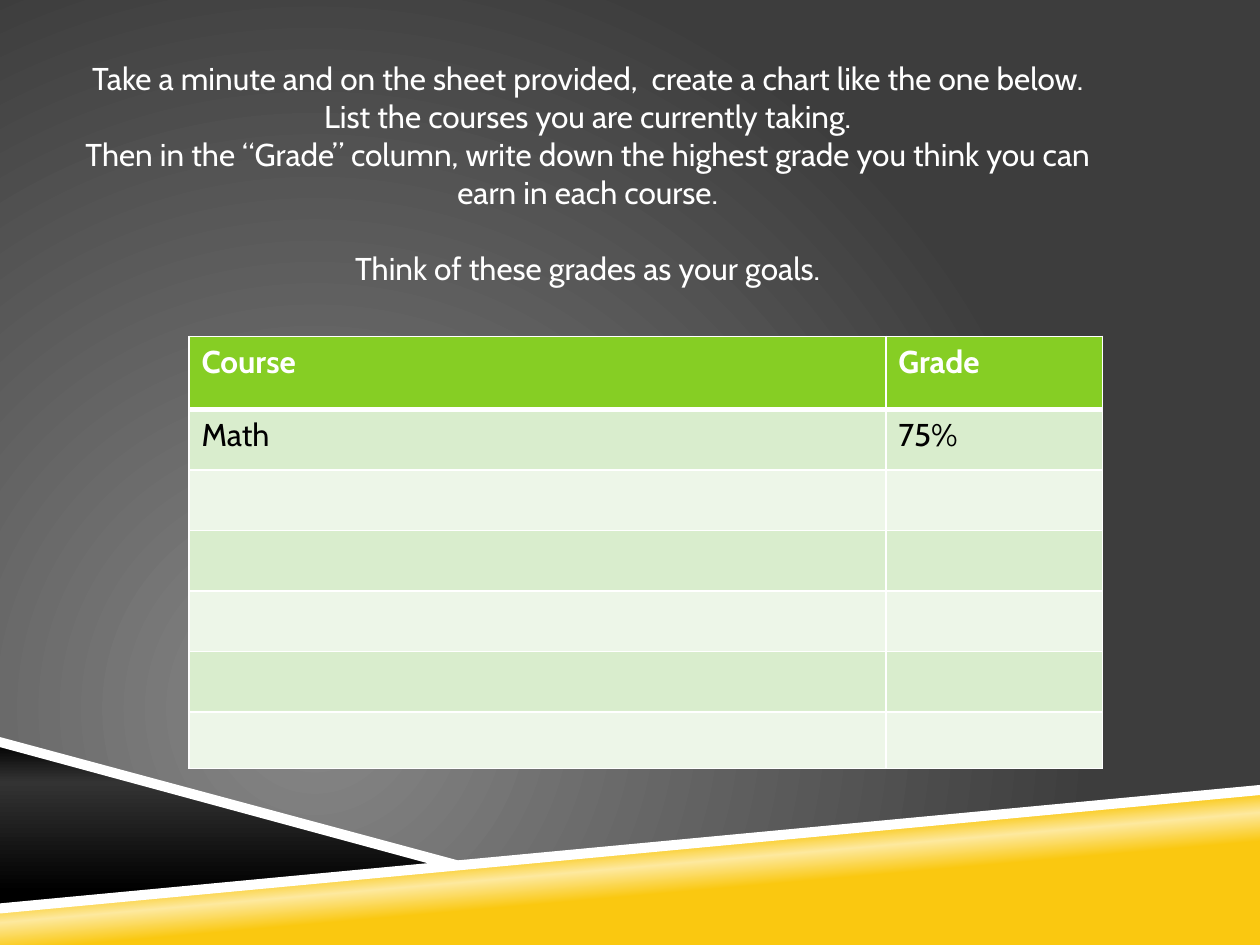
"""Build the course and grade goals slide."""
from dataclasses import dataclass
from typing import Any, NamedTuple

from lxml.etree import SubElement
from pptx import Presentation
from pptx.dml.color import RGBColor
from pptx.enum.text import MSO_AUTO_SIZE, PP_ALIGN
from pptx.oxml.ns import qn
from pptx.util import Inches, Pt

COLS, ROWS = 100, 75
CELL = Inches(10) / COLS


@dataclass(frozen=True)
class Theme:
    font: str = "Cabin"
    size: int = 18
    gap: int = 22
    thin: float = 1
    thick: float = 3
    white: str = "FFFFFF"
    black: str = "000000"
    head: str = "86CE24"
    bands: tuple = ("D9EDCD", "EDF6E8")
    back: tuple = ((0, "878787"), (100, "3D3D3D"))
    gold: tuple = ((39, "FAC810"), (50, "FDE99F"), (58, "FAC810"))
    dark: tuple = ((0, "000000"), (24, "333333"), (90, "000000"))


class Band(NamedTuple):
    points: tuple
    stops: tuple = ()
    angle: int = 0


class Para(NamedTuple):
    text: str
    gap: int = 0


THEME = Theme()
BANDS = (
    Band(((0, 72.1), (100, 62.7), (100, 75), (0, 75)), THEME.gold, 265),
    Band(((0, 58.9), (35.9, 68.5), (0, 72.1)), THEME.dark, 90),
    Band(((100, 62.3), (0, 71.7), (0, 72.5), (100, 63.1))),
    Band(((0, 58.5), (0, 59.3), (35, 68.8), (37.5, 68.6))),
)
PARAS = (
    Para("Take a minute and on the sheet provided,  create a chart like "
         "the one below. List the courses you are currently taking."),
    Para("Then in the “Grade” column, write down the highest grade you "
         "think you can earn in each course."),
    Para("Think of these grades as your goals.", THEME.gap),
)
GRID = (("Course", "Grade"), ("Math", "75%")) + (("", ""),) * 5
WIDTHS = (55.3, 17.2)
HEIGHTS = (5.8,) + (4.8,) * 5 + (4.5,)


def span(cells: float) -> int:
    """Turn grid cells into a length."""
    return round(cells * CELL)


def assign(item: Any, values: dict) -> None:
    """Set each named attribute on an item."""
    for name, value in values.items():
        setattr(item, name, value)


def blend(fill: Any, stops: tuple, angle: int | None = None) -> None:
    """Give a fill a linear gradient, or a round one without an angle."""
    fill.gradient()
    grad = fill._xPr.find(qn("a:gradFill"))
    for child in list(grad):
        grad.remove(child)
    group = SubElement(grad, qn("a:gsLst"))
    for place, color in stops:
        stop = SubElement(group, qn("a:gs"), pos=str(place * 1000))
        SubElement(stop, qn("a:srgbClr"), val=color)
    if angle is None:
        path = SubElement(grad, qn("a:path"), path="circle")
        SubElement(path, qn("a:fillToRect"), l="50000", t="100000",
                   r="100000", b="50000")
    else:
        SubElement(grad, qn("a:lin"), ang=str(angle * 60000), scaled="0")


def paint(fill: Any, color: str) -> None:
    """Give a fill one solid colour."""
    fill.solid()
    fill.fore_color.rgb = RGBColor.from_string(color)


def write(para: Any, text: str, color: str, bold: bool = False) -> None:
    """Add a styled run to a paragraph."""
    run = para.add_run()
    run.text = text
    assign(run.font, {"name": THEME.font, "size": Pt(THEME.size),
                      "bold": bold})
    run.font.color.rgb = RGBColor.from_string(color)


def draw_band(slide: Any, band: Band) -> None:
    """Draw one slanted band."""
    first, *rest = [(span(x), span(y)) for x, y in band.points]
    pen = slide.shapes.build_freeform(*first)
    pen.add_line_segments(rest, close=True)
    shape = pen.convert_to_shape()
    shape.shadow.inherit = False
    shape.line.fill.background()
    if band.stops:
        blend(shape.fill, band.stops, band.angle)
    else:
        paint(shape.fill, THEME.white)


def draw_text(slide: Any) -> None:
    """Draw the instructions."""
    box = slide.shapes.add_textbox(*map(span, (5.8, 4.2, 81.7, 19.2)))
    frame = box.text_frame
    assign(frame, {"word_wrap": True,
                   "auto_size": MSO_AUTO_SIZE.SHAPE_TO_FIT_TEXT})
    for index, item in enumerate(PARAS):
        para = frame.add_paragraph() if index else frame.paragraphs[0]
        para.alignment = PP_ALIGN.CENTER
        if item.gap:
            para.space_before = Pt(item.gap)
        write(para, item.text, THEME.white)


def edge(cell: Any, widths: dict[str, float]) -> None:
    """Draw white borders on the sides of a cell."""
    props = cell._tc.get_or_add_tcPr()
    for side, width in widths.items():
        line = SubElement(props, qn(f"a:ln{side}"), w=str(Pt(width)))
        solid = SubElement(line, qn("a:solidFill"))
        SubElement(solid, qn("a:srgbClr"), val=THEME.white)


def draw_table(slide: Any) -> None:
    """Draw the course table."""
    place = map(span, (15, 26.7, sum(WIDTHS), sum(HEIGHTS)))
    table = slide.shapes.add_table(len(GRID), len(WIDTHS), *place).table
    for column, width in zip(table.columns, WIDTHS):
        column.width = span(width)
    for index, (row, height) in enumerate(zip(table.rows, HEIGHTS)):
        row.height = span(height)
        head = index == 0
        fill = THEME.head if head else THEME.bands[(index - 1) % 2]
        ink = THEME.white if head else THEME.black
        top = THEME.thick if index == 1 else THEME.thin
        base = THEME.thick if head else THEME.thin
        for cell, text in zip(row.cells, GRID[index]):
            edge(cell, {"L": THEME.thin, "R": THEME.thin,
                        "T": top, "B": base})
            paint(cell.fill, fill)
            if text:
                write(cell.text_frame.paragraphs[0], text, ink, head)


def main() -> None:
    """Build and save the slide."""
    deck = Presentation()
    assign(deck, {"slide_width": span(COLS), "slide_height": span(ROWS)})
    slide = deck.slides.add_slide(deck.slide_layouts[6])
    blend(slide.background.fill, THEME.back)
    for band in BANDS:
        draw_band(slide, band)
    draw_text(slide)
    draw_table(slide)
    deck.save("out.pptx")


if __name__ == "__main__":
    main()
